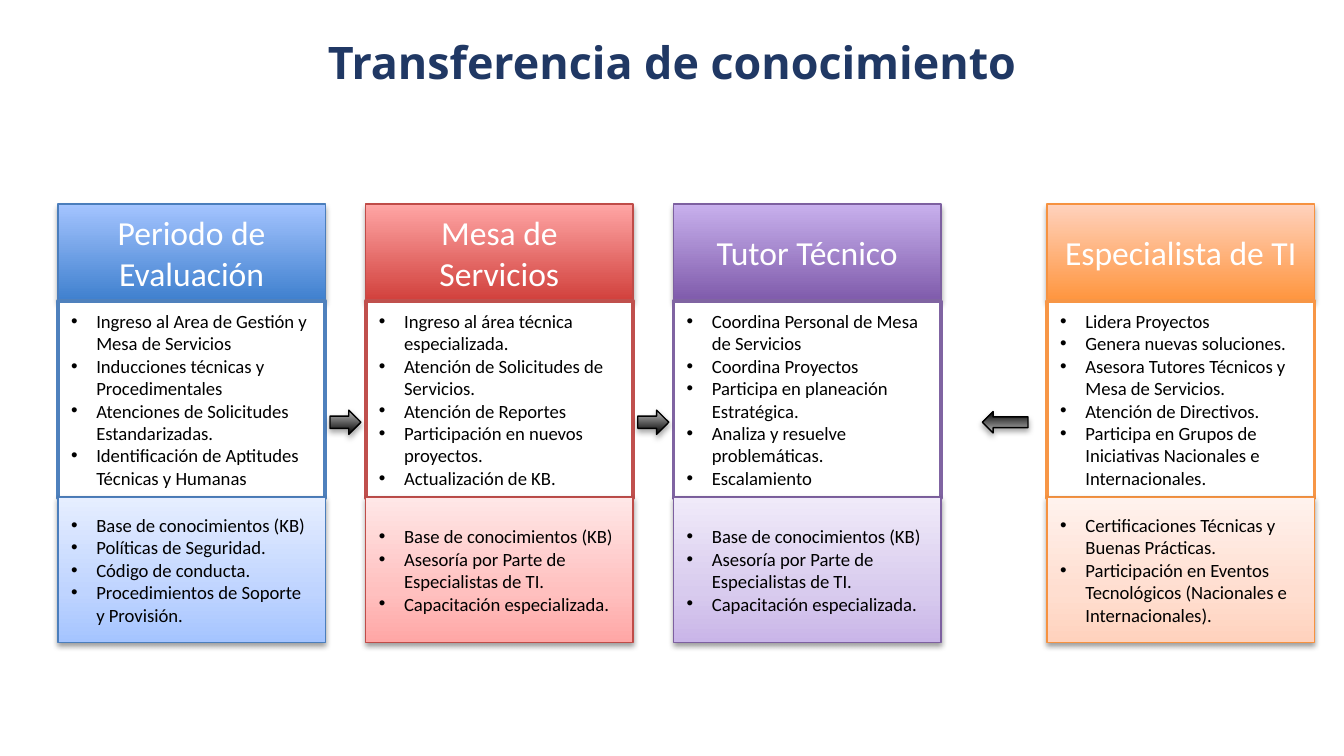
from pptx import Presentation
from pptx.dml.color import RGBColor as RGB
from pptx.enum.shapes import MSO_SHAPE as Shape
from pptx.enum.text import MSO_ANCHOR as Anchor, PP_ALIGN as Align
from pptx.oxml.ns import qn
from pptx.util import Pt
from lxml.etree import SubElement

HEADING = "Transferencia de conocimiento"
STAGES = [
    {
        "name": "Periodo de Evaluación", "left": 31,
        "duties": ["Ingreso al Area de Gestión y Mesa de Servicios",
                   "Inducciones técnicas y Procedimentales",
                   "Atenciones de Solicitudes Estandarizadas.",
                   "Identificación de Aptitudes Técnicas y Humanas"],
        "support": ["Base de conocimientos (KB)", "Políticas de Seguridad.",
                    "Código de conducta.",
                    "Procedimientos de Soporte y Provisión."],
    },
    {
        "name": "Mesa de Servicios", "left": 195.9,
        "duties": ["Ingreso al área técnica especializada.",
                   "Atención de Solicitudes de Servicios.",
                   "Atención de Reportes",
                   "Participación en nuevos proyectos.",
                   "Actualización de KB."],
        "support": ["Base de conocimientos (KB)",
                    "Asesoría por Parte de Especialistas de TI.",
                    "Capacitación especializada."],
    },
    {
        "name": "Tutor Técnico", "left": 360.8,
        "duties": ["Coordina Personal de Mesa de Servicios",
                   "Coordina Proyectos",
                   "Participa en planeación Estratégica.",
                   "Analiza y resuelve problemáticas.",
                   "Escalamiento"],
        "support": ["Base de conocimientos (KB)",
                    "Asesoría por Parte de Especialistas de TI.",
                    "Capacitación especializada."],
    },
    {
        "name": "Especialista de TI", "left": 560.9,
        "duties": ["Lidera Proyectos", "Genera nuevas soluciones.",
                   "Asesora Tutores Técnicos y Mesa de Servicios.",
                   "Atención de Directivos.",
                   "Participa en Grupos de Iniciativas Nacionales e Internacionales."],
        "support": ["Certificaciones Técnicas y Buenas Prácticas.",
                    "Participación en Eventos Tecnológicos (Nacionales e Internacionales)."],
    },
]

THEME = {
    "title": {"name": "Open Sans", "size": Pt(24), "bold": True, "color": "203864"},
    "header": {"name": "Calibri", "size": Pt(18), "color": "FFFFFF"},
    "body": {"name": "Calibri", "size": Pt(10), "color": "000000"},
    "paper": [(0, "FFFFFF")],
    "arrow": {"fill": [(0, "000000"), (100, "BDBDBD")], "edge": "000000"},
    "stages": [
        {"header": [(0, "3F80CE"), (100, "A4C4FF")], "edge": "4B7EBC", "frame": "4F81BD",
         "support": [(0, "A4C4FF"), (35, "BFD4FF"), (100, "E6EEFF")]},
        {"header": [(0, "D1403C"), (100, "FFA6A5")], "edge": "BF4C48", "frame": "C0504D",
         "support": [(0, "FFA6A5"), (35, "FFC0BF"), (100, "FFE7E7")]},
        {"header": [(0, "7F5BAB"), (100, "C8B0ED")], "edge": "7D60A0", "frame": "8064A2",
         "support": [(0, "C9B5E8"), (35, "D8CBEE"), (100, "F0EAF9")]},
        {"header": [(0, "FF953E"), (100, "FFD2BD")], "edge": "F69240", "frame": "F79646",
         "support": [(0, "FFD2BD"), (35, "FFDED0"), (100, "FFF2ED")]},
    ],
    "thin": 0.75,
    "thick": 2,
    "deep_shadow": (35, 1.8),
    "soft_shadow": (38, 1.6),
}

STAGE_WIDTH = 143.3
HEADER_TOP, HEADER_HEIGHT = 109.4, 51.8
DUTIES_TOP, DUTIES_HEIGHT = 161.3, 105.4
SUPPORT_TOP, SUPPORT_HEIGHT = 266.4, 77.8
ARROW_MIDDLE = 226.2
INDENT = 13.5


def paint_gradient(block, stops):
    block.fill.gradient()
    block.fill.gradient_angle = 90
    stop_list = block.element.spPr.find(qn("a:gradFill")).find(qn("a:gsLst"))
    for old_stop in list(stop_list):
        stop_list.remove(old_stop)
    for position, color in stops:
        stop = SubElement(stop_list, qn("a:gs"), pos=str(position * 1000))
        SubElement(stop, qn("a:srgbClr"), val=color)


def cast_shadow(block, opacity, distance):
    effects = block.element.spPr.find(qn("a:effectLst"))
    shadow = SubElement(effects, qn("a:outerShdw"), blurRad=str(Pt(3.1)),
                        dist=str(Pt(distance)), dir="5400000", rotWithShape="0")
    color = SubElement(shadow, qn("a:srgbClr"), val="000000")
    SubElement(color, qn("a:alpha"), val=str(opacity * 1000))


def add_block(slide, preset, box, stops, edge, weight, shadow=None):
    block = slide.shapes.add_shape(preset, *map(Pt, box))
    block.shadow.inherit = False
    if len(stops) > 1:
        paint_gradient(block, stops)
    else:
        block.fill.solid()
        block.fill.fore_color.rgb = RGB.from_string(stops[0][1])
    block.line.color.rgb = RGB.from_string(edge)
    block.line.width = Pt(weight)
    if shadow:
        cast_shadow(block, *shadow)
    return block


def write(holder, lines, style, align=Align.CENTER, bulleted=False):
    frame = holder.text_frame
    frame.word_wrap = True
    frame.vertical_anchor = Anchor.MIDDLE
    for number, line in enumerate(lines):
        paragraph = frame.add_paragraph() if number else frame.paragraphs[0]
        paragraph.alignment = align
        if bulleted:
            layout = paragraph._p.get_or_add_pPr()
            layout.set("marL", str(Pt(INDENT)))
            layout.set("indent", str(-Pt(INDENT)))
            SubElement(layout, qn("a:buFont"), typeface="Arial")
            SubElement(layout, qn("a:buChar"), char="•")
        run = paragraph.add_run()
        run.text = line
        for attribute, value in style.items():
            if attribute == "color":
                run.font.color.rgb = RGB.from_string(value)
            else:
                setattr(run.font, attribute, value)


def add_stage(slide, stage, colors):
    left, thin = stage["left"], THEME["thin"]
    header = add_block(slide, Shape.RECTANGLE, (left, HEADER_TOP, STAGE_WIDTH, HEADER_HEIGHT),
                       colors["header"], colors["edge"], thin, THEME["deep_shadow"])
    write(header, [stage["name"]], THEME["header"])
    duties = add_block(slide, Shape.RECTANGLE, (left, DUTIES_TOP, STAGE_WIDTH, DUTIES_HEIGHT),
                       THEME["paper"], colors["frame"], THEME["thick"])
    write(duties, stage["duties"], THEME["body"], Align.LEFT, True)
    support = add_block(slide, Shape.RECTANGLE, (left, SUPPORT_TOP, STAGE_WIDTH, SUPPORT_HEIGHT),
                        colors["support"], colors["edge"], thin, THEME["soft_shadow"])
    write(support, stage["support"], THEME["body"], Align.LEFT, True)


def add_arrow(slide, center, width, height, rotation=0):
    box = (center - width / 2, ARROW_MIDDLE - height / 2, width, height)
    arrow = add_block(slide, Shape.RIGHT_ARROW, box, THEME["arrow"]["fill"],
                      THEME["arrow"]["edge"], THEME["thin"], THEME["deep_shadow"])
    arrow.rotation = rotation


def main():
    deck = Presentation()
    deck.slide_width, deck.slide_height = Pt(720), Pt(405)
    slide = deck.slides.add_slide(deck.slide_layouts[6])

    title = slide.shapes.add_textbox(Pt(156.2), Pt(7.2), Pt(407.6), Pt(51.8))
    write(title, [HEADING], THEME["title"])

    for stage, colors in zip(STAGES, THEME["stages"]):
        add_stage(slide, stage, colors)

    gap_centers = [(before["left"] + STAGE_WIDTH + after["left"]) / 2
                   for before, after in zip(STAGES, STAGES[1:])]
    for center in gap_centers[:2]:
        add_arrow(slide, center, 16.6, 13)
    add_arrow(slide, gap_centers[2] + 6, 24.5, 11.5, 180)

    deck.save("out.pptx")


if __name__ == "__main__":
    main()
